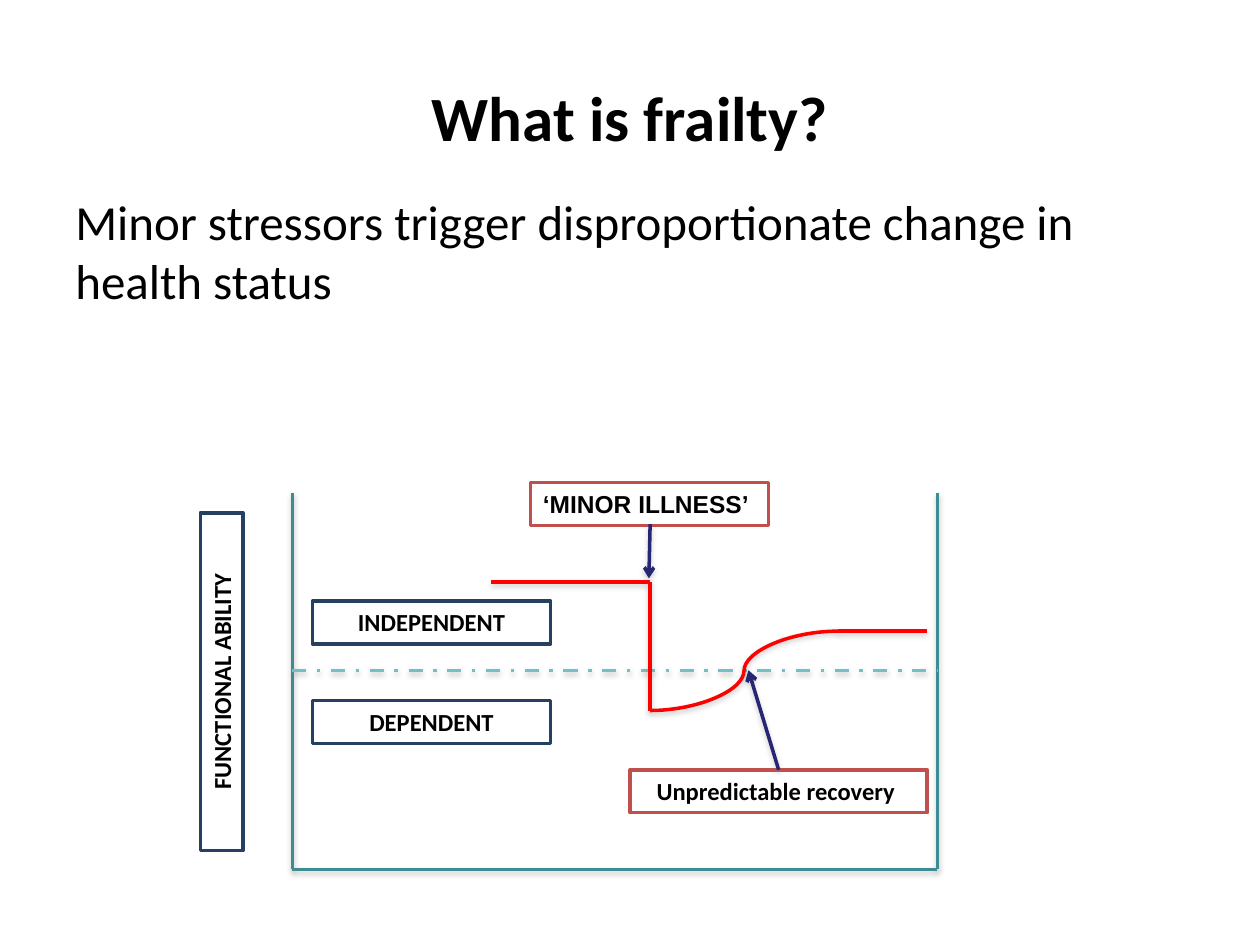
from dataclasses import dataclass
from typing import Optional

from lxml.etree import SubElement
from pptx import Presentation
from pptx.dml.color import RGBColor
from pptx.enum.dml import MSO_LINE
from pptx.enum.shapes import MSO_CONNECTOR as LINK, MSO_SHAPE
from pptx.enum.text import MSO_ANCHOR as ANCHOR, MSO_AUTO_SIZE as FIT, PP_ALIGN as ALIGN
from pptx.oxml.ns import qn
from pptx.util import Inches, Pt

BLACK, WHITE, NAVY, BRICK = "000000", "FFFFFF", "254061", "C0504D"
TEAL, AQUA, RED, INDIGO = "3C8C93", "72BFC5", "FF0000", "262673"
LINE_WIDTH = Pt(2)
LABEL_HEIGHT = 0.34

# Edges of the chart frame and levels of the curve
LEFT, RIGHT, TOP, BOTTOM = 2.32, 7.44, 3.91, 6.9
THRESHOLD = 5.32
START, ILLNESS, RECOVERED, END = 3.9, 5.16, 6.65, 7.36
BASELINE, LOW, PLATEAU = 4.62, 5.64, 5.01


@dataclass
class Stroke:
    start: tuple[float, float]
    end: tuple[float, float]
    color: str
    kind: LINK = LINK.STRAIGHT
    dash: Optional[MSO_LINE] = None
    arrow: bool = False


@dataclass
class Label:
    text: str
    left: float
    top: float
    width: float
    border: str = NAVY
    font: str = "Calibri"
    align: ALIGN = ALIGN.CENTER
    rotation: float = 0


STROKES = [
    # Frame and threshold
    Stroke((LEFT, BOTTOM), (RIGHT, BOTTOM), TEAL),
    Stroke((LEFT, BOTTOM), (LEFT, TOP), TEAL),
    Stroke((RIGHT, TOP), (RIGHT, BOTTOM), TEAL),
    Stroke((LEFT, THRESHOLD), (RIGHT, THRESHOLD), AQUA, dash=MSO_LINE.DASH_DOT),
    # Functional ability over time
    Stroke((START, BASELINE), (ILLNESS, BASELINE), RED),
    Stroke((ILLNESS, BASELINE), (ILLNESS, LOW), RED),
    Stroke((RECOVERED, PLATEAU), (END, PLATEAU), RED),
    Stroke((ILLNESS, LOW), (RECOVERED, PLATEAU), RED, kind=LINK.CURVE),
]
POINTERS = [
    Stroke((ILLNESS, 4.16), (5.15, 4.59), INDIGO, arrow=True),
    Stroke((6.18, 6.11), (5.94, THRESHOLD), INDIGO, arrow=True),
]
LABELS = [
    Label("DEPENDENT", 2.48, 5.56, 1.89),
    Label("‘MINOR ILLNESS’", 4.21, 3.83, 1.89, BRICK, "Arial", ALIGN.LEFT),
    Label("INDEPENDENT", 2.48, 4.77, 1.89),
    Label("FUNCTIONAL ABILITY", 0.42, 5.24, 2.68, rotation=270),
    Label("Unpredictable recovery ", 5, 6.11, 2.36, BRICK),
]


def rgb(color: str) -> RGBColor:
    return RGBColor.from_string(color)


def write(frame, text: str, *, size: float, font: str = "Calibri", bold: bool = False,
          align: ALIGN = ALIGN.LEFT, anchor: ANCHOR = ANCHOR.TOP,
          before: float = 0, fit: FIT = FIT.NONE) -> None:
    frame.word_wrap = True
    frame.auto_size = fit
    frame.vertical_anchor = anchor
    para = frame.paragraphs[0]
    para.alignment = align
    para.space_before = Pt(before)
    span = para.add_run()
    span.text = text
    span.font.name = font
    span.font.size = Pt(size)
    span.font.bold = bold
    span.font.color.rgb = rgb(BLACK)


def add_soft_shadow(connector) -> None:
    effects = SubElement(connector._element.spPr, qn("a:effectLst"))
    shadow = SubElement(effects, qn("a:outerShdw"), blurRad=str(Pt(3.1)),
                        dist=str(Pt(1.6)), dir="5400000", rotWithShape="0")
    color = SubElement(shadow, qn("a:srgbClr"), val="808080")
    SubElement(color, qn("a:alpha"), val="38000")


def draw_stroke(page, stroke: Stroke) -> None:
    ends = [Inches(value) for value in stroke.start + stroke.end]
    connector = page.shapes.add_connector(stroke.kind, *ends)
    line = connector.line
    line.color.rgb = rgb(stroke.color)
    line.width = LINE_WIDTH
    if stroke.dash is not None:
        line.dash_style = stroke.dash
    if stroke.arrow:
        SubElement(connector._element.spPr.find(qn("a:ln")), qn("a:tailEnd"), type="arrow")
    add_soft_shadow(connector)


def draw_label(page, label: Label) -> None:
    box = page.shapes.add_shape(MSO_SHAPE.RECTANGLE, Inches(label.left), Inches(label.top),
                                Inches(label.width), Inches(LABEL_HEIGHT))
    box.rotation = label.rotation
    box.shadow.inherit = False
    box.fill.solid()
    box.fill.fore_color.rgb = rgb(WHITE)
    box.line.color.rgb = rgb(label.border)
    box.line.width = LINE_WIDTH
    write(box.text_frame, label.text, size=14, font=label.font, bold=True,
          align=label.align, fit=FIT.SHAPE_TO_FIT_TEXT)


def main() -> None:
    deck = Presentation()
    deck.slide_width, deck.slide_height = Inches(10), Inches(7.5)
    page = deck.slides.add_slide(deck.slide_layouts[5])

    # Title and statement
    title = page.shapes.title
    title.left, title.top = Inches(0.5), Inches(0.3)
    title.width, title.height = Inches(9), Inches(1.25)
    write(title.text_frame, "What is frailty?", size=36, bold=True,
          align=ALIGN.CENTER, anchor=ANCHOR.MIDDLE)
    statement = page.shapes.add_textbox(Inches(0.5), Inches(1.47), Inches(9), Inches(1.26))
    write(statement.text_frame,
          "Minor stressors trigger disproportionate change in health status",
          size=28, before=5.6)

    # Diagram
    for stroke in STROKES:
        draw_stroke(page, stroke)
    for label in LABELS:
        draw_label(page, label)
    for pointer in POINTERS:
        draw_stroke(page, pointer)

    deck.save("out.pptx")


if __name__ == "__main__":
    main()
